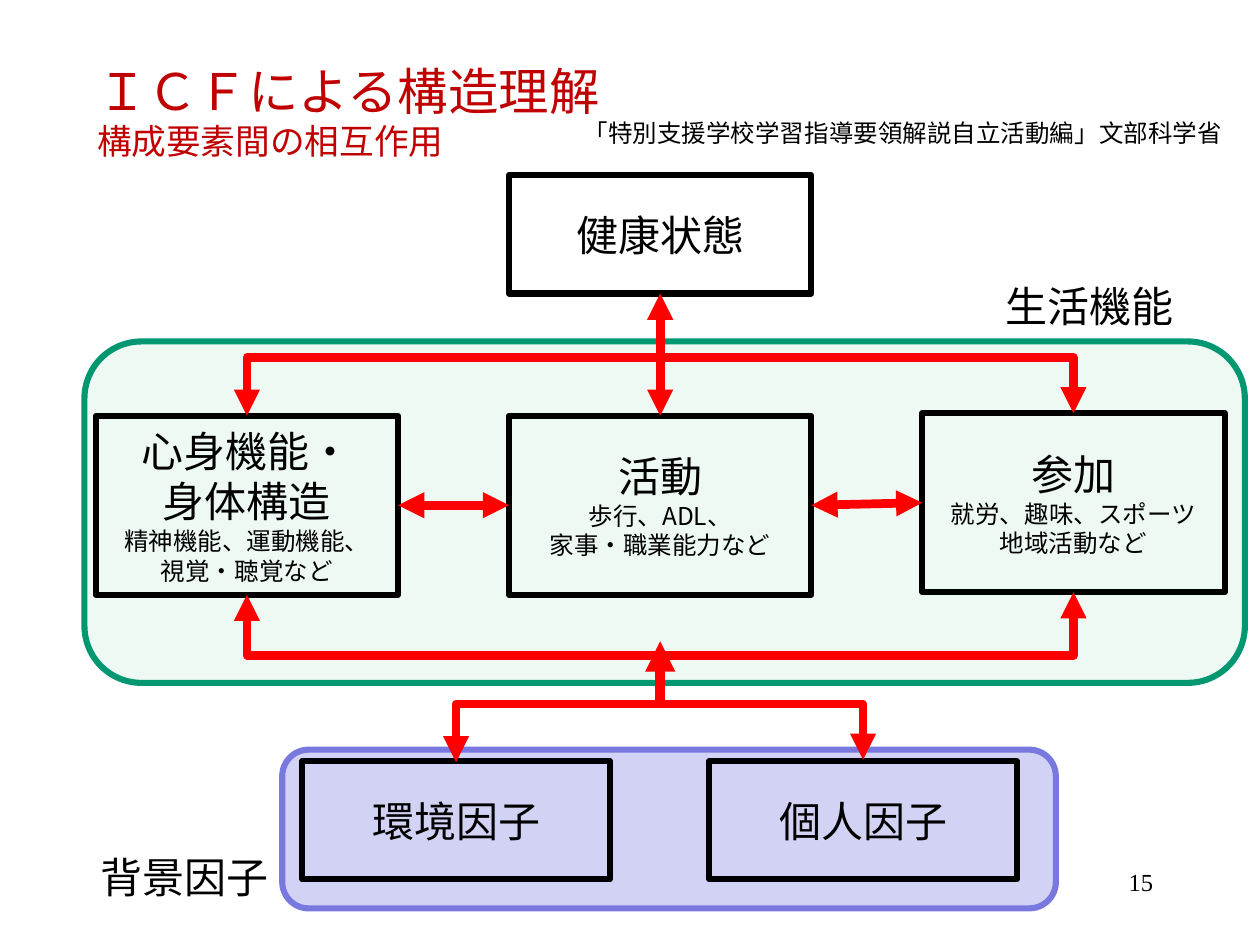
from dataclasses import dataclass

from lxml import etree
from pptx import Presentation
from pptx.dml.color import RGBColor
from pptx.enum import shapes as s, text as t
from pptx.oxml import ns
from pptx.util import Inches, Pt

FONT = "Noto Sans CJK JP"
BLACK = RGBColor(0x00, 0x00, 0x00)
CRIMSON = RGBColor(0xC0, 0x00, 0x00)
RED = RGBColor(0xFF, 0x00, 0x00)
GREEN = RGBColor(0x00, 0x97, 0x71)
MINT = RGBColor(0xEE, 0xF9, 0xF4)
VIOLET = RGBColor(0x78, 0x78, 0xDE)
LILAC = RGBColor(0xD2, 0xD2, 0xF4)
LEFT, MID, RIGHT = t.PP_ALIGN.LEFT, t.PP_ALIGN.CENTER, t.PP_ALIGN.RIGHT


@dataclass
class Box:
    """A factor with a heading and smaller examples below it."""
    x: float
    y: float
    w: float
    h: float
    head: str
    notes: str = ""

    @property
    def mid(self) -> float:
        return self.x + self.w / 2

    @property
    def end(self) -> float:
        return self.x + self.w

    @property
    def base(self) -> float:
        return self.y + self.h


def add_run(para, words: str, size: float, color=BLACK, font=FONT) -> None:
    run = para.add_run()
    run.text = words
    run.font.size, run.font.name = Pt(size), font
    run.font.color.rgb = color
    east = etree.SubElement(run.font._element, ns.qn("a:ea"))
    east.set("typeface", font)


def write(frame, words: str, size=24, align=MID, wrap=True, **style) -> None:
    """Add one paragraph per line of words, after any text present."""
    frame.word_wrap = wrap
    for line in words.split("\n"):
        para = frame.paragraphs[-1]
        if para.runs:
            para = frame.add_paragraph()
        para.alignment = align
        add_run(para, line, size, **style)


def add_label(slide, x, y, w, h, words: str, **style) -> None:
    box = slide.shapes.add_textbox(*map(Inches, (x, y, w, h)))
    write(box.text_frame, words, align=RIGHT, **style)


def add_panel(slide, kind, area, line: RGBColor, fill=None):
    shape = slide.shapes.add_shape(kind, *map(Inches, area))
    shape.shadow.inherit = False
    if fill is None:
        shape.fill.background()
    else:
        shape.fill.solid()
        shape.fill.fore_color.rgb = fill
    shape.line.color.rgb, shape.line.width = line, Pt(3.5)
    etree.SubElement(shape.line._get_or_add_ln(), ns.qn("a:round"))
    return shape


def add_box(slide, box: Box) -> None:
    area = (box.x, box.y, box.w, box.h)
    shape = add_panel(slide, s.MSO_SHAPE.RECTANGLE, area, BLACK)
    frame = shape.text_frame
    frame.vertical_anchor = t.MSO_ANCHOR.MIDDLE
    write(frame, box.head)
    if box.notes:
        write(frame, box.notes, size=14)


def add_arrow(slide, x1, y1, x2, y2, kind=s.MSO_CONNECTOR.STRAIGHT,
              width=5.0, both=True):
    arrow = slide.shapes.add_connector(kind, *map(Inches, (x1, y1, x2, y2)))
    arrow.line.color.rgb, arrow.line.width = RED, Pt(width)
    line = arrow.line._get_or_add_ln()
    etree.SubElement(line, ns.qn("a:round"))
    for end in ("a:headEnd", "a:tailEnd") if both else ("a:tailEnd",):
        etree.SubElement(line, ns.qn(end)).set("type", "triangle")
    etree.SubElement(arrow._element.spPr, ns.qn("a:effectLst"))
    return arrow


def add_bend(slide, x1, y1, x2, y2, bar: float) -> None:
    """Join two points by way of a level bar; y1 must be below y2."""
    cx, cy = (x1 + x2) / 2, (y1 + y2) / 2
    rise, span = y1 - y2, x2 - x1
    arrow = add_arrow(slide, cx + rise / 2, cy + span / 2,
                      cx - rise / 2, cy - span / 2, s.MSO_CONNECTOR.ELBOW)
    # A quarter turn makes the middle segment level
    arrow._element.spPr.find(ns.qn("a:xfrm")).set("rot", "5400000")
    guides = arrow._element.spPr.find(ns.qn("a:prstGeom")).get_or_add_avLst()
    guide = etree.SubElement(guides, ns.qn("a:gd"))
    guide.set("name", "adj1")
    guide.set("fmla", f"val {round((y1 - bar) / rise * 100000)}")


def main() -> None:
    prs = Presentation()
    prs.slide_width, prs.slide_height = Inches(10), Inches(7.5)
    slide = prs.slides.add_slide(prs.slide_layouts[5])

    # Background panels
    rounded = s.MSO_SHAPE.ROUNDED_RECTANGLE
    add_panel(slide, rounded, (2.24, 5.95, 6.14, 1.26), VIOLET, LILAC)
    add_panel(slide, rounded, (0.67, 2.71, 9.21, 2.71), GREEN, MINT)

    # Title and subtitle
    title = slide.shapes.title
    title.left, title.top = Inches(0.67), Inches(0.52)
    title.width, title.height = Inches(8.23), Inches(0.72)
    frame = title.text_frame
    frame.vertical_anchor = t.MSO_ANCHOR.MIDDLE
    frame.auto_size = t.MSO_AUTO_SIZE.NONE
    write(frame, "ＩＣＦによる構造理解", size=28.8, align=LEFT, color=CRIMSON)
    frame.paragraphs[0].add_line_break()
    add_run(frame.paragraphs[0], "構成要素間の相互作用", 19.8, CRIMSON)

    # Factors
    health = Box(4.04, 1.39, 2.4, 0.94, "健康状態")
    body = Box(0.76, 3.3, 2.4, 1.42, "心身機能・\n身体構造",
               "精神機能、運動機能、\n視覚・聴覚など")
    act = Box(4.04, 3.3, 2.4, 1.42, "活動", "歩行、ADL、\n家事・職業能力など")
    part = Box(7.32, 3.28, 2.4, 1.42, "参加",
               "就労、趣味、スポーツ\n地域活動など")
    place = Box(2.4, 6.04, 2.44, 0.94, "環境因子")
    person = Box(5.63, 6.04, 2.44, 0.94, "個人因子")
    for box in (health, body, act, part, place, person):
        add_box(slide, box)

    # Interactions
    level = act.y + act.h / 2
    add_arrow(slide, act.x, level, body.end, level)
    add_arrow(slide, part.x, part.y + part.h / 2, act.end, level)
    add_arrow(slide, health.mid, health.base, act.mid, act.y)
    add_bend(slide, body.mid, body.y, part.mid, part.y, 2.84)
    add_bend(slide, body.mid, body.base, part.mid, part.base, 5.2)
    add_bend(slide, place.mid, 6.05, person.mid, 6.03, 5.59)
    add_arrow(slide, act.mid, 5.56, act.mid, 5.09, width=5.75, both=False)

    # Labels, source and page number
    add_label(slide, 7.47, 2.18, 1.94, 0.5, "生活機能")
    add_label(slide, 0.35, 6.71, 1.88, 0.5, "背景因子")
    add_label(slide, 1.61, 0.89, 8.19, 0.34,
              "「特別支援学校学習指導要領解説自立活動編」文部科学省", size=14)
    add_label(slide, 7.17, 6.83, 2.08, 0.5, "15", size=14,
              font="Times New Roman")

    prs.save("out.pptx")


if __name__ == "__main__":
    main()
